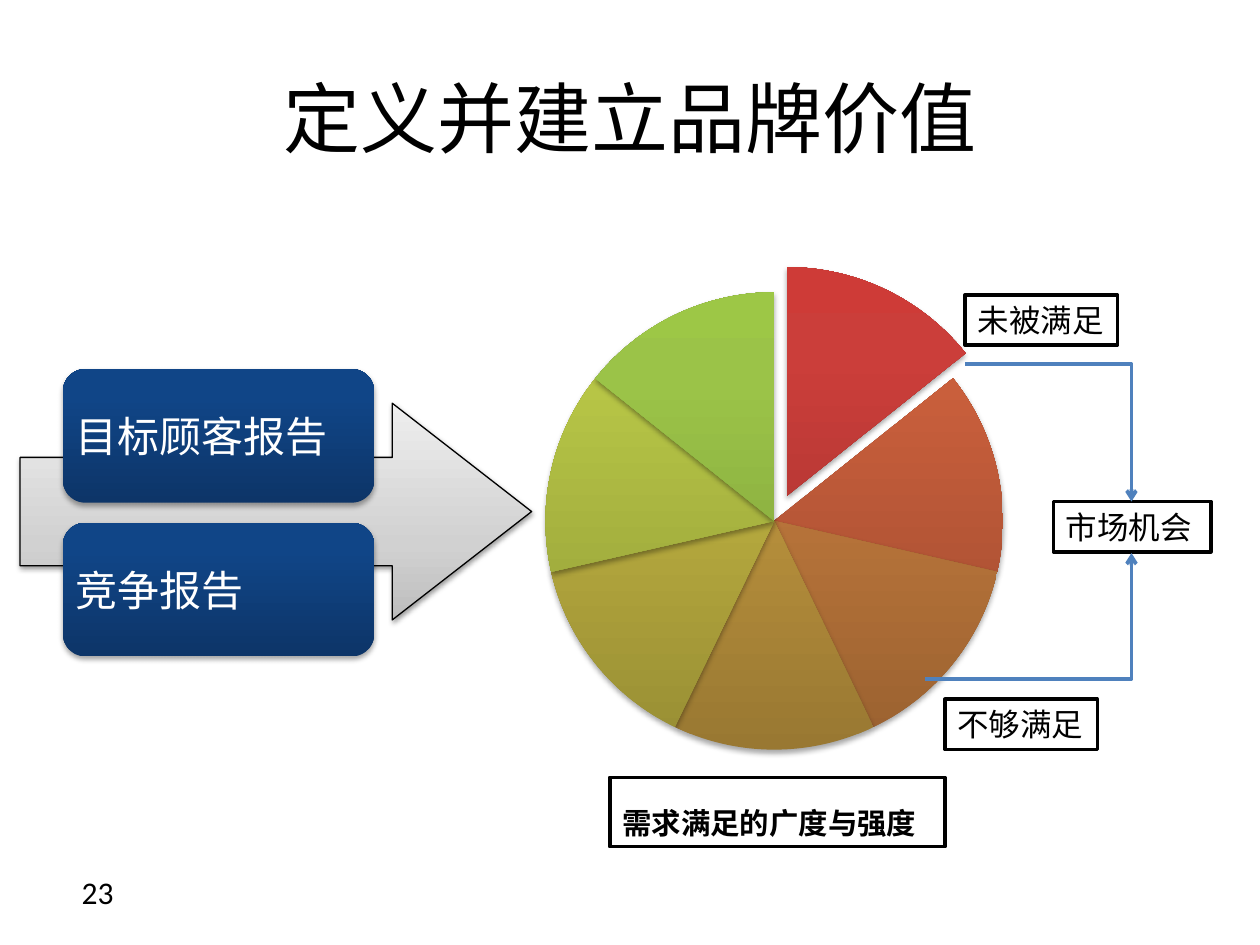
"""Builds the brand value slide with reports, a needs pie and market opportunity labels."""
import copy

import lxml.etree
import pptx
import pptx.dml.color
import pptx.enum.shapes
import pptx.enum.text
import pptx.oxml.ns
import pptx.util

Inches = pptx.util.Inches
Pt = pptx.util.Pt
RGBColor = pptx.dml.color.RGBColor
Shape = pptx.enum.shapes.MSO_SHAPE
Align = pptx.enum.text.PP_ALIGN
Anchor = pptx.enum.text.MSO_ANCHOR
qn = pptx.oxml.ns.qn

BLACK = RGBColor(0x00, 0x00, 0x00)
WHITE = RGBColor(0xFF, 0xFF, 0xFF)
CONNECTOR_BLUE = RGBColor(0x4F, 0x81, 0xBD)


def ramp(*codes):
    return [RGBColor.from_string(code) for code in codes]


ARROW_GREYS = ramp("BDBDBD", "D1D1D1", "EEEEEE")
REPORT_BLUES = ramp("0D3568", "104587", "0E458A")
SLICE_RAMPS = [
    ramp("9C2F2D", "CB3E3A", "CE3B37"),
    ramp("9B492E", "C95F3C", "CD5E3A"),
    ramp("9A6130", "C87E3F", "CC7E3C"),
    ramp("997832", "C79C41", "CB9D3F"),
    ramp("988E34", "C6B843", "C9BB41"),
    ramp("8D9736", "B7C546", "B9C844"),
    ramp("779737", "9BC348", "9DC746"),
]


class SlideBuilder:
    def __init__(self, slide, font_name="Calibri"):
        self.slide = slide
        self.font_name = font_name

    def add_words(self, shape, text, size, color=BLACK, bold=False,
                  align=Align.LEFT, anchor=Anchor.TOP, wrap=True):
        frame = shape.text_frame
        frame.word_wrap = wrap
        frame.vertical_anchor = anchor
        para = frame.paragraphs[0]
        para.alignment = align
        span = para.add_run()
        span.text = text
        span.font.name = self.font_name
        span.font.size = Pt(size)
        span.font.bold = bold
        span.font.color.rgb = color

    def title(self, text, left, top, width, height):
        title = self.slide.shapes.title
        title.left, title.top = Inches(left), Inches(top)
        title.width, title.height = Inches(width), Inches(height)
        self.add_words(title, text, 44, align=Align.CENTER, anchor=Anchor.MIDDLE)

    def text(self, text, left, top, width, height, size):
        box = self.slide.shapes.add_textbox(
            Inches(left), Inches(top), Inches(width), Inches(height))
        self.add_words(box, text, size)

    def add_shadow(self, shape, distance, opacity):
        shape.shadow.inherit = False
        effects = shape._element.spPr.find(qn("a:effectLst"))
        shadow = lxml.etree.SubElement(
            effects, qn("a:outerShdw"), blurRad=str(Pt(3.1)),
            dist=str(Pt(distance)), dir="5400000", rotWithShape="0")
        color = lxml.etree.SubElement(shadow, qn("a:srgbClr"), val="000000")
        lxml.etree.SubElement(color, qn("a:alpha"), val=str(opacity * 1000))

    def gradient_shape(self, kind, left, top, width, height, colors,
                       middle=0.8, outlined=False):
        shape = self.slide.shapes.add_shape(
            kind, Inches(left), Inches(top), Inches(width), Inches(height))
        shape.fill.gradient()
        shape.fill.gradient_angle = 90
        stop_list = shape._element.spPr.find(".//" + qn("a:gsLst"))
        stop_list.insert(1, copy.deepcopy(stop_list[0]))
        for stop, position, color in zip(shape.fill.gradient_stops, (0, middle, 1), colors):
            stop.position = position
            stop.color.rgb = color
        if outlined:
            shape.line.color.rgb = BLACK
            shape.line.width = Pt(0.75)
            self.add_shadow(shape, 1.6, 38)
        else:
            shape.line.fill.background()
            self.add_shadow(shape, 1.8, 35)
        return shape

    def report(self, text, top):
        box = self.gradient_shape(
            Shape.ROUNDED_RECTANGLE, 0.5, top, 2.47, 1.06, REPORT_BLUES)
        box.text_frame.margin_left = Inches(0.05)
        self.add_words(box, text, 24, WHITE, anchor=Anchor.MIDDLE)

    def wedge(self, left, top, diameter, start, sweep, colors):
        wedge = self.gradient_shape(Shape.PIE, left, top, diameter, diameter, colors)
        for index, angle in enumerate((start, start + sweep)):
            wedge.adjustments[index] = angle % 360 * 0.6

    def label(self, text, left, top, width, height=0.4, size=18, bold=False,
              anchor=Anchor.TOP, wrap=False):
        box = self.slide.shapes.add_shape(
            Shape.RECTANGLE, Inches(left), Inches(top), Inches(width), Inches(height))
        box.shadow.inherit = False
        box.fill.solid()
        box.fill.fore_color.rgb = WHITE
        box.line.color.rgb = BLACK
        box.line.width = Pt(2)
        self.add_words(box, text, size, bold=bold, anchor=anchor, wrap=wrap)

    def elbow(self, begin_x, begin_y, end_x, end_y):
        connector = self.slide.shapes.add_connector(
            pptx.enum.shapes.MSO_CONNECTOR.ELBOW,
            Inches(begin_x), Inches(begin_y), Inches(end_x), Inches(end_y))
        connector.line.color.rgb = CONNECTOR_BLUE
        connector.line.width = Pt(2)
        properties = connector._element.spPr
        properties.find(qn("a:prstGeom")).set("prst", "bentConnector2")
        lxml.etree.SubElement(properties.find(qn("a:ln")), qn("a:tailEnd"), type="arrow")
        lxml.etree.SubElement(properties, qn("a:effectLst"))


def main():
    deck = pptx.Presentation()
    deck.slide_width, deck.slide_height = Inches(10), Inches(7.5)
    page = SlideBuilder(deck.slides.add_slide(deck.slide_layouts[5]))

    page.title("定义并建立品牌价值", 0.5, 0.3, 9, 1.25)
    arrow = page.gradient_shape(
        Shape.RIGHT_ARROW, 0.16, 3.2, 4.06, 1.72, ARROW_GREYS, middle=0.35, outlined=True)
    arrow.adjustments[1] = 0.643
    page.report("目标顾客报告", 2.93)
    page.report("竞争报告", 4.15)
    page.label("需求满足的广度与强度", 4.84, 6.17, 2.66, 0.55, size=16.8,
               bold=True, anchor=Anchor.BOTTOM, wrap=True)

    sweep = 360 / len(SLICE_RAMPS)
    for index, colors in enumerate(SLICE_RAMPS):
        left, top = (4.43, 2.12) if index == 0 else (4.33, 2.32)
        page.wedge(left, top, 3.63, 270 + index * sweep, sweep, colors)

    page.label("市场机会", 8.36, 3.98, 1.25, wrap=True)
    page.elbow(7.66, 2.89, 8.98, 3.98)
    page.elbow(7.34, 5.39, 8.98, 4.39)
    page.text("23", 0.55, 6.88, 2.33, 0.4, 18)
    page.label("未被满足", 7.66, 2.34, 1.21)
    page.label("不够满足", 7.5, 5.55, 1.21)
    deck.save("out.pptx")


if __name__ == "__main__":
    main()
